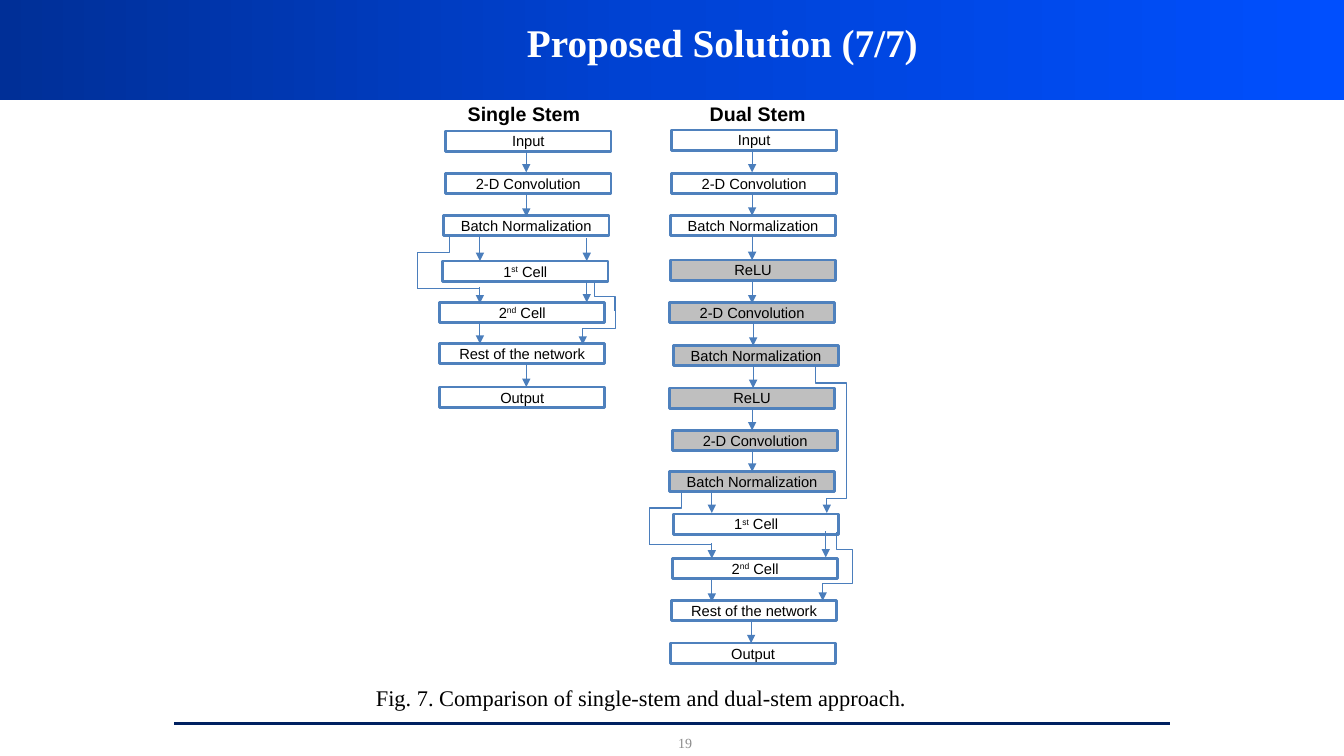
import copy
import pptx
import pptx.util
import pptx.dml.color
import pptx.enum.shapes
import pptx.enum.text
import pptx.oxml
import pptx.oxml.ns

RGBColor = pptx.dml.color.RGBColor
PX = 9144
WHITE = RGBColor(0xFF, 0xFF, 0xFF)
BLACK = RGBColor(0, 0, 0)
GRAY = RGBColor(0xBF, 0xBF, 0xBF)
NUMBER_GRAY = RGBColor(0x8B, 0x8B, 0x8B)
BORDER = RGBColor(0x4F, 0x81, 0xBD)
ARROW = RGBColor(0x4B, 0x7E, 0xBC)
NAVY = RGBColor(0x00, 0x20, 0x60)
BAR_STOPS = [(0, RGBColor(0x00, 0x2F, 0x97)), (0.5, RGBColor(0x00, 0x43, 0xD6)),
             (1, RGBColor(0x00, 0x4F, 0xFE))]
SERIF = "Times New Roman"
SANS = "Arial"
STRAIGHT = pptx.enum.shapes.MSO_CONNECTOR.STRAIGHT
ELBOW = pptx.enum.shapes.MSO_CONNECTOR.ELBOW
RECT = pptx.enum.shapes.MSO_SHAPE.RECTANGLE
CENTER = pptx.enum.text.PP_ALIGN.CENTER
LEFT = pptx.enum.text.PP_ALIGN.LEFT
MIDDLE = pptx.enum.text.MSO_ANCHOR.MIDDLE
TOP = pptx.enum.text.MSO_ANCHOR.TOP

CONV, NORM = "2-D Convolution", "Batch Normalization"
FIRST, SECOND, REST = "1^st^ Cell", "2^nd^ Cell", "Rest of the network"

SINGLE_BOXES = [(442, 130, "Input"), (442, 172, CONV), (440, 214, NORM),
                (439, 259, FIRST), (436, 300, SECOND), (436, 341, REST),
                (436, 384, "Output")]
DUAL_BOXES = [(666, 129, "Input"), (666, 172, CONV), (665, 214, NORM),
              (668, 510, FIRST), (667, 554, SECOND), (666, 596, REST),
              (665, 638, "Output")]
EXTRA_BOXES = [(665, 258, "ReLU"), (664, 300, CONV), (668, 343, NORM),
               (664, 385, "ReLU"), (667, 427, CONV), (664, 468, NORM)]

DOWN_ARROWS = [
    (522, 149, 171), (522, 192, 215), (476, 233, 259), (582, 236, 259),
    (476, 285, 301), (582, 279, 300), (476, 319, 341), (522, 361, 384),
    (746, 149, 171), (746, 192, 214), (746, 235, 258), (746, 279, 301),
    (747, 320, 343), (747, 363, 385), (746, 405, 427), (746, 445, 468),
    (706, 487, 509), (819, 527, 553), (706, 539, 554), (706, 574, 597),
    (745, 616, 638)]
PLAIN_LINES = [(414, 265, 414, 286), (414, 286, 476, 286), (644, 520, 644, 540),
               (644, 540, 706, 540), (840, 395, 840, 488)]
SKIP_STARTS = [(446, 233, 414, 268), (590, 280, 610, 309), (676, 487, 644, 521),
               (809, 363, 840, 397), (830, 528, 846, 563)]
SKIP_ENDS = [(610, 309, 578, 342, 0.5), (840, 486, 820, 509, 0.37),
             (846, 562, 816, 596, 0.5)]


def px(*lengths):
    return [round(length * PX) for length in lengths]


def write(shape, text, font=SANS, size=10.5, color=BLACK, bold=False,
          align=CENTER, anchor=MIDDLE, margins=(10, 5), wrap=True):
    tf = shape.text_frame
    tf.auto_size = pptx.enum.text.MSO_AUTO_SIZE.NONE
    tf.word_wrap = wrap
    tf.vertical_anchor = anchor
    tf.margin_left = tf.margin_right = margins[0] * PX
    tf.margin_top = tf.margin_bottom = margins[1] * PX
    p = tf.paragraphs[0]
    p.alignment = align
    for i, part in enumerate(text.split("^")):
        r = p.add_run()
        r.text = part
        r.font.name = font
        r.font.size = pptx.util.Pt(size)
        r.font.bold = bold
        r.font.color.rgb = color
        if i % 2:
            r.font._element.set("baseline", "30000")


def add_label(s, left, top, width, height, text, **style):
    write(s.shapes.add_textbox(*px(left, top, width, height)), text, **style)


def add_box(s, left, top, text, fill):
    box = s.shapes.add_shape(RECT, *px(left, top, 164, 20))
    box.shadow.inherit = False
    box.fill.solid()
    box.fill.fore_color.rgb = fill
    box.line.color.rgb = BORDER
    box.line.width = pptx.util.Pt(2)
    write(box, text, margins=(0, 0))


def add_line(s, x1, y1, x2, y2, kind=STRAIGHT, arrow=False, color=ARROW, width=0.75):
    line = s.shapes.add_connector(kind, *px(x1, y1, x2, y2))
    line.line.color.rgb = color
    line.line.width = pptx.util.Pt(width)
    if arrow:
        ln = line.line._get_or_add_ln()
        pptx.oxml.ns.qn("a:tailEnd")
        tail = pptx.oxml.parse_xml(
            '<a:tailEnd %s type="triangle"/>' % pptx.oxml.ns.nsdecls("a"))
        ln.append(tail)
    spPr = line._element.spPr
    spPr.append(pptx.oxml.parse_xml("<a:effectLst %s/>" % pptx.oxml.ns.nsdecls("a")))
    return line


def add_elbow(s, x1, y1, x2, y2, bend=0.5, arrow=False):
    cx, cy = (x1 + x2) / 2, (y1 + y2) / 2
    half_w, half_h = (y2 - y1) / 2, abs(x2 - x1) / 2
    to_right = x2 > x1
    if to_right:
        half_w = -half_w
    elbow = add_line(s, cx - half_w, cy - half_h, cx + half_w, cy + half_h, ELBOW, arrow)
    elbow._element.spPr.xfrm.set("rot", str((270 if to_right else 90) * 60000))
    geom = elbow._element.spPr.find(pptx.oxml.ns.qn("a:prstGeom"))
    for av in geom.findall(pptx.oxml.ns.qn("a:avLst")):
        geom.remove(av)
    geom.append(pptx.oxml.parse_xml(
        '<a:avLst %s><a:gd name="adj1" fmla="val %d"/></a:avLst>'
        % (pptx.oxml.ns.nsdecls("a"), round(bend * 100000))))


def add_title_bar(s):
    bar = s.shapes.add_shape(RECT, *px(0, 0, 1333, 99))
    bar.shadow.inherit = False
    bar.line.fill.background()
    bar.fill.gradient()
    bar.fill.gradient_angle = 0
    first = bar._element.spPr.find(".//" + pptx.oxml.ns.qn("a:gs"))
    first.addnext(copy.deepcopy(first))
    for stop, (position, color) in zip(bar.fill.gradient_stops, BAR_STOPS):
        stop.position = position
        stop.color.rgb = color
    s.shapes._spTree.insert(2, bar._element)


def add_title(s, text):
    title = s.shapes.title
    title.left, title.top, title.width, title.height = px(118, 19, 1197, 45)
    write(title, text, font=SERIF, size=28, color=WHITE, bold=True)


def main():
    prs = pptx.Presentation()
    prs.slide_width, prs.slide_height = px(1333, 750)
    s = prs.slides.add_slide(prs.slide_layouts[5])
    add_title_bar(s)
    add_title(s, "Proposed Solution (7/7)")
    add_line(s, 173, 718, 1160, 718, color=NAVY, width=2.5)
    add_label(s, 524, 729, 311, 16, "19", font=SERIF, size=10, color=NUMBER_GRAY)
    add_label(s, 363, 669, 700, 45,
              "Fig. 7. Comparison of single-stem and dual-stem approach.",
              font=SERIF, size=16, align=LEFT, anchor=TOP, margins=(10, 10))
    for left, heading in [(454, "Single Stem"), (694, "Dual Stem")]:
        add_label(s, left, 96, 145, 34, heading, size=14, bold=True,
                  align=LEFT, anchor=TOP, wrap=False)
    for boxes, fill in [(SINGLE_BOXES + DUAL_BOXES, WHITE), (EXTRA_BOXES, GRAY)]:
        for left, top, text in boxes:
            add_box(s, left, top, text, fill)
    for x, top, bottom in DOWN_ARROWS:
        add_line(s, x, top, x, bottom, arrow=True)
    for ends in PLAIN_LINES:
        add_line(s, *ends)
    for ends in SKIP_STARTS:
        add_elbow(s, *ends)
    for ends in SKIP_ENDS:
        add_elbow(s, *ends, arrow=True)
    prs.save("out.pptx")


if __name__ == "__main__":
    main()
